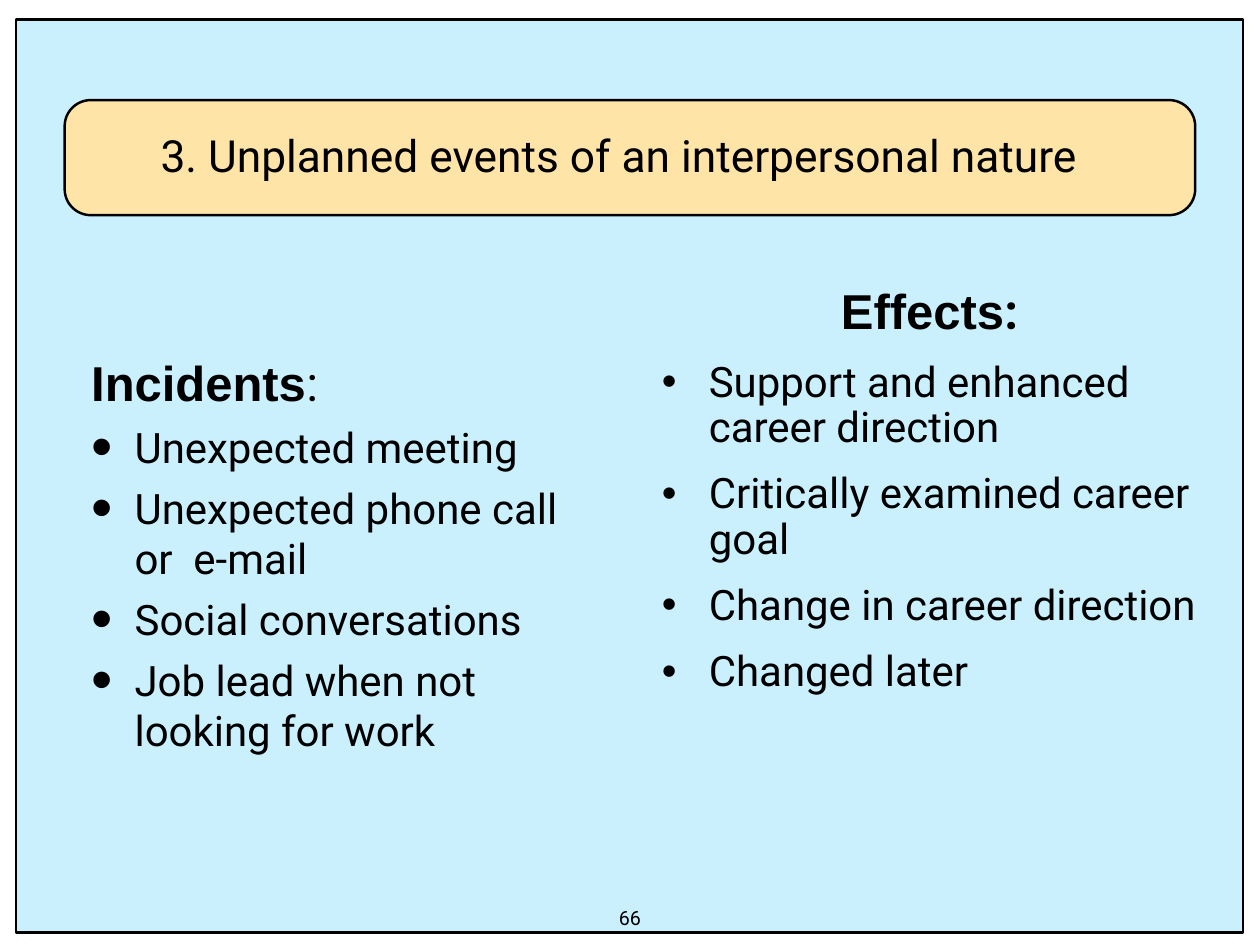
from lxml import etree
from pptx import Presentation
from pptx.dml.color import RGBColor
from pptx.enum.shapes import MSO_SHAPE
from pptx.enum.text import MSO_ANCHOR, PP_ALIGN
from pptx.oxml.ns import qn
from pptx.util import Inches, Pt

RECTANGLE, ROUNDED = MSO_SHAPE.RECTANGLE, MSO_SHAPE.ROUNDED_RECTANGLE
TOP, MIDDLE = MSO_ANCHOR.TOP, MSO_ANCHOR.MIDDLE
LEFT, CENTER = PP_ALIGN.LEFT, PP_ALIGN.CENTER

THEME = {
    "ink": RGBColor.from_string("000000"),
    "panel": RGBColor.from_string("CAF0FE"),
    "banner": RGBColor.from_string("FFE4A8"),
    "body_font": "Roboto",
    "heading_font": "Arial",
    "title_size": Pt(36),
    "heading_size": Pt(39.8),
    "item_size": Pt(34.1),
    "number_size": Pt(16),
    "outline": Pt(2),
    "inset": Inches(0.06),
}

deck = Presentation()
deck.slide_width, deck.slide_height = Inches(14.22), Inches(10.67)
slide = deck.slides.add_slide(deck.slide_layouts[6])


def place(left, top, width, height):
    """Turn percentages of the slide's size into a position and a size."""
    across, down = deck.slide_width / 100, deck.slide_height / 100
    return int(left * across), int(top * down), int(width * across), int(height * down)


def write(paragraph, text, size, font=THEME["body_font"], bold=False):
    run = paragraph.add_run()
    run.text = text
    style = {"size": size, "name": font, "bold": bold}
    for attribute, value in style.items():
        setattr(run.font, attribute, value)
    run.font.color.rgb = THEME["ink"]


# Background panel and title banner
for outline, area, colour in (
    (RECTANGLE, (1.27, 2.06, 97.4, 96.63), "panel"),
    (ROUNDED, (5.13, 10.59, 89.73, 12.18), "banner"),
):
    backdrop = slide.shapes.add_shape(outline, *place(*area))
    backdrop.shadow.inherit = False
    backdrop.fill.solid()
    backdrop.fill.fore_color.rgb = THEME[colour]
    backdrop.line.color.rgb = THEME["ink"]
    backdrop.line.width = THEME["outline"]
    if outline == ROUNDED:
        backdrop.adjustments[0] = 0.227

# Text areas; the title sits a little left of centre, the number needs its full width
frames = {}
for part, area, anchor, left_inset, right_inset in (
    ("title", (6.82, 8.06, 86.43, 16.68), MIDDLE, THEME["inset"], Inches(0.32)),
    ("effects", (52.11, 29.8, 44.3, 49.67), TOP, THEME["inset"], THEME["inset"]),
    ("incidents", (6.82, 30.37, 41.7, 56.42), MIDDLE, THEME["inset"], THEME["inset"]),
    ("number", (48.73, 95.31, 2.53, 3.56), TOP, 0, 0),
):
    frame = slide.shapes.add_textbox(*place(*area)).text_frame
    layout = {
        "word_wrap": True,
        "vertical_anchor": anchor,
        "margin_left": left_inset,
        "margin_right": right_inset,
        "margin_top": THEME["inset"],
        "margin_bottom": THEME["inset"],
    }
    for attribute, value in layout.items():
        setattr(frame, attribute, value)
    frames[part] = frame

# Title and page number
for part, text in (
    ("title", "3. Unplanned events of an interpersonal nature"),
    ("number", "66"),
):
    line = frames[part].paragraphs[0]
    line.alignment = CENTER
    write(line, text, THEME[f"{part}_size"])

# The two lists
lists = {
    "effects": {
        "heading": "Effects", "colon": ": ", "bold_colon": True, "align": CENTER,
        "indent": 0.53, "spacing": 0.9, "gap": 17.1, "bullet_scale": 100,
        "items": (
            "Support and enhanced career direction",
            "Critically examined career goal",
            "Change in career direction",
            "Changed later",
        ),
    },
    "incidents": {
        "heading": "Incidents", "colon": ":", "bold_colon": False, "align": LEFT,
        "indent": 0.49, "spacing": 1.0, "gap": 8.5, "bullet_scale": 145,
        "items": (
            "Unexpected meeting",
            "Unexpected phone call  or  e-mail",
            "Social conversations",
            "Job lead when not looking for work",
        ),
    },
}
for part, content in lists.items():
    heading = frames[part].paragraphs[0]
    heading.alignment = content["align"]
    heading.space_before = Pt(8.5)
    write(heading, content["heading"], THEME["heading_size"], THEME["heading_font"], True)
    write(heading, content["colon"], THEME["heading_size"], bold=content["bold_colon"])

    for text in content["items"]:
        item = frames[part].add_paragraph()
        item.alignment = LEFT
        item.space_before = Pt(content["gap"])
        write(item, text, THEME["item_size"])

    for paragraph in frames[part].paragraphs:
        paragraph.line_spacing = content["spacing"]
        properties = paragraph._p.get_or_add_pPr()
        properties.set("marL", str(Inches(content["indent"])))
        properties.set("indent", str(-Inches(content["indent"])))
        if paragraph.runs[0].text in content["items"]:
            for tag, key, value in (
                ("a:buSzPct", "val", str(content["bullet_scale"] * 1000)),
                ("a:buFont", "typeface", THEME["heading_font"]),
                ("a:buChar", "char", "•"),
            ):
                etree.SubElement(properties, qn(tag)).set(key, value)

deck.save("out.pptx")
